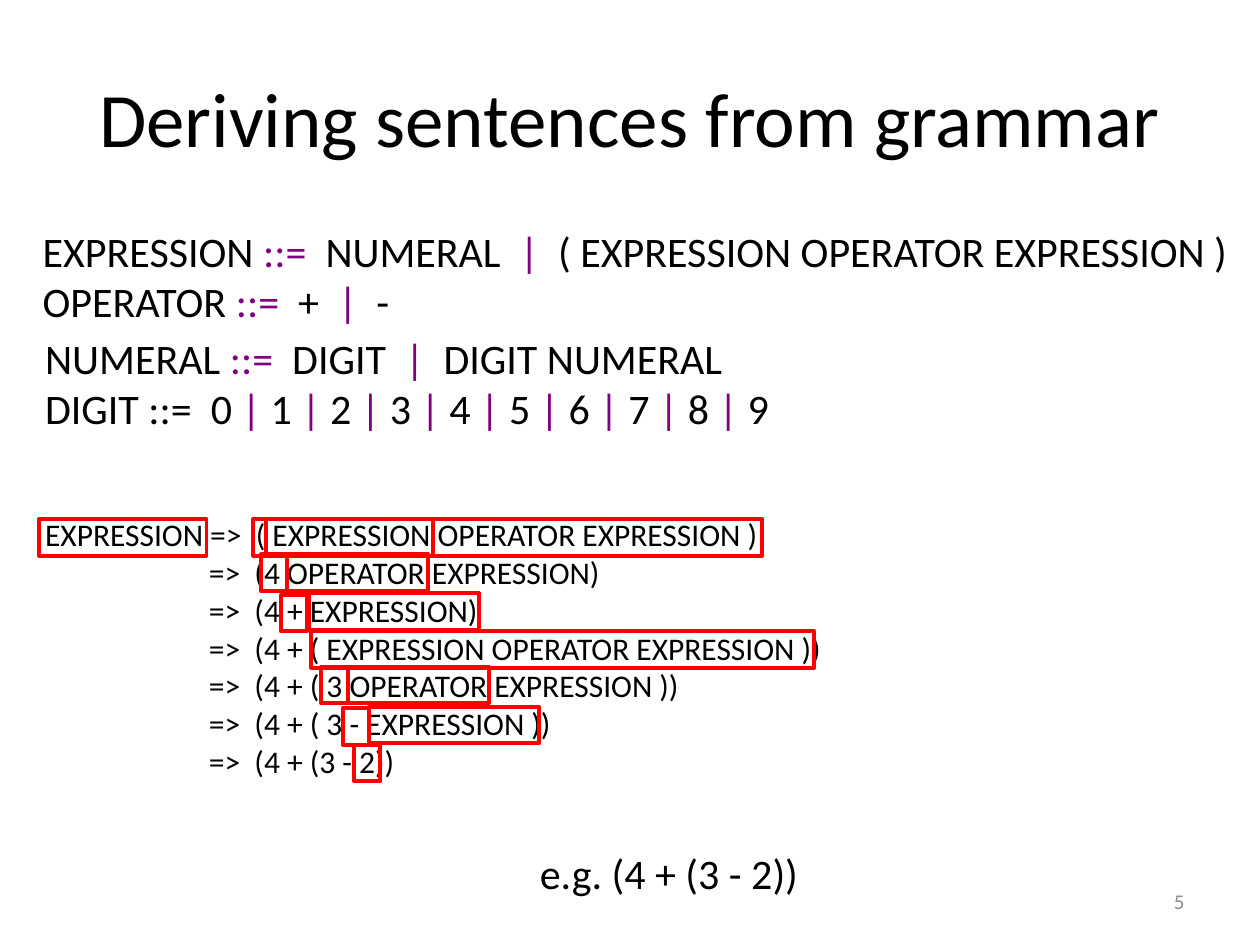
"""Build a slide that derives a sentence from a small expression grammar."""
from pptx import Presentation
from pptx.dml.color import RGBColor
from pptx.enum.shapes import MSO_SHAPE
from pptx.enum.text import MSO_ANCHOR, PP_ALIGN
from pptx.util import Inches, Pt

COLORS = {"text": "000000", "symbol": "800080", "highlight": "FF0000", "number": "8C8C8C"}
FONT = "Calibri"
MARK = "~"

TITLE = "Deriving sentences from grammar"
EXPRESSION_RULES = [
    "EXPRESSION ~::=~  NUMERAL  ~|~  ( EXPRESSION OPERATOR EXPRESSION )",
    "OPERATOR ~::=~  +  ~|~  -",
]
NUMERAL_RULES = [
    "NUMERAL ~::=~  DIGIT  ~|~  DIGIT NUMERAL",
    "DIGIT ::=  " + " ~|~ ".join("0123456789"),
]
EXAMPLE = "e.g. (4 + (3 - 2))"
DERIVATION_START = "EXPRESSION =>  ( EXPRESSION OPERATOR EXPRESSION )"
DERIVATION_STEPS = [
    "=>  (4 OPERATOR EXPRESSION)",
    "=>  (4 + EXPRESSION)",
    "=>  (4 + ( EXPRESSION OPERATOR EXPRESSION ))",
    "=>  (4 + ( 3 OPERATOR EXPRESSION ))",
    "=>  (4 + ( 3 - EXPRESSION ))",
    "=>  (4 + (3 - 2))",
]
STEP_INDENT = 1.3
HIGHLIGHT_HEIGHT = 0.29
HIGHLIGHT_ROWS = [
    (4.12, [(0.31, 1.33), (2.01, 4.04), (2.11, 1.33)]),
    (4.40, [(2.07, 0.21), (2.28, 1.12)]),
    (4.72, [(2.23, 0.21)]),
    (4.71, [(2.45, 1.35)]),
    (5.01, [(2.47, 3.99)]),
    (5.29, [(2.55, 0.21), (2.76, 1.12)]),
    (5.62, [(2.72, 0.21)]),
    (5.61, [(2.93, 1.35)]),
    (5.91, [(2.81, 0.21)]),
]


def color(name):
    return RGBColor.from_string(COLORS[name])


def add_text(slide, box, lines, size, align=PP_ALIGN.LEFT, anchor=MSO_ANCHOR.TOP, ink="text"):
    frame = slide.shapes.add_textbox(*map(Inches, box)).text_frame
    frame.word_wrap = True
    frame.vertical_anchor = anchor
    for index, line in enumerate(lines):
        paragraph = frame.add_paragraph() if index else frame.paragraphs[0]
        paragraph.alignment = align
        paragraph.font.name = FONT
        paragraph.font.size = Pt(size)
        paragraph.font.color.rgb = color(ink)
        for position, part in enumerate(line.split(MARK)):
            run = paragraph.add_run()
            run.text = part
            if position % 2:
                run.font.color.rgb = color("symbol")
    return frame


def add_highlight(slide, left, top, width):
    shape = slide.shapes.add_shape(
        MSO_SHAPE.RECTANGLE, *map(Inches, (left, top, width, HIGHLIGHT_HEIGHT))
    )
    shape.shadow.inherit = False
    shape.fill.background()
    shape.line.color.rgb = color("highlight")
    shape.line.width = Pt(2.25)


def main():
    presentation = Presentation()
    presentation.slide_width, presentation.slide_height = Inches(10), Inches(7.5)
    slide = presentation.slides.add_slide(presentation.slide_layouts[6])

    add_text(slide, (0.5, 0.3, 9, 1.25), [TITLE], 44, PP_ALIGN.CENTER, MSO_ANCHOR.MIDDLE)
    add_text(slide, (0.24, 1.74, 10, 0.91), EXPRESSION_RULES, 24)
    add_text(slide, (0.26, 2.59, 7, 0.91), NUMERAL_RULES, 24)
    add_text(slide, (3.69, 6.68, 3.24, 0.5), [EXAMPLE], 24, PP_ALIGN.CENTER)
    derivation = add_text(
        slide, (0.26, 4.04, 8.94, 2.22), [DERIVATION_START, *DERIVATION_STEPS], 18
    )
    for paragraph in derivation.paragraphs[1:]:
        paragraph._p.get_or_add_pPr().set("marL", str(Inches(STEP_INDENT)))

    for top, spans in HIGHLIGHT_ROWS:
        for left, width in spans:
            add_highlight(slide, left, top, width)

    add_text(
        slide, (7.17, 6.95, 2.33, 0.4), ["5"], 12, PP_ALIGN.RIGHT, MSO_ANCHOR.MIDDLE, "number"
    )
    presentation.save("out.pptx")


if __name__ == "__main__":
    main()
